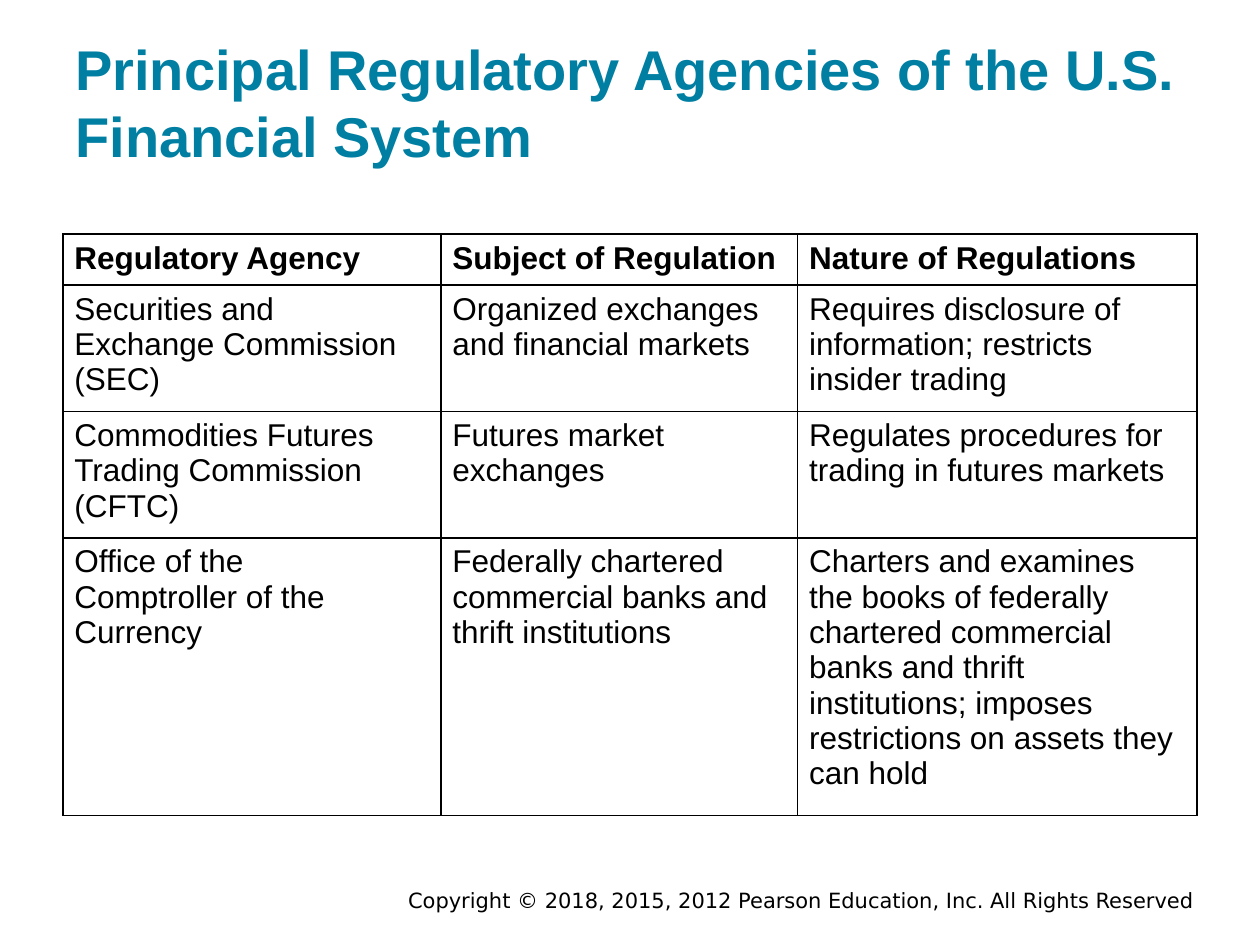
from lxml import etree
from pptx import Presentation
from pptx.dml.color import RGBColor
from pptx.enum.text import MSO_ANCHOR, PP_ALIGN
from pptx.oxml.ns import qn
from pptx.util import Cm, Pt

LEFT, RIGHT = PP_ALIGN.LEFT, PP_ALIGN.RIGHT
MIDDLE, BOTTOM = MSO_ANCHOR.MIDDLE, MSO_ANCHOR.BOTTOM

COLORS = {"title": "007FA3", "text": "000000", "border": "000000", "cell": "FFFFFF"}

COLUMN_WIDTHS = [7.62, 7.19, 8.05]
ROW_HEIGHTS = [1.03, 2.39, 2.39, 5.22]
ROWS = [
    ["Regulatory Agency", "Subject of Regulation", "Nature of Regulations"],
    [
        "Securities and\nExchange Commission (SEC)",
        "Organized exchanges\nand financial markets",
        "Requires disclosure of\ninformation; restricts insider trading",
    ],
    [
        "Commodities Futures\nTrading Commission\n(CFTC)",
        "Futures market\nexchanges",
        "Regulates procedures for trading in futures markets",
    ],
    [
        "Office of the\nComptroller of the\nCurrency",
        "Federally chartered\ncommercial banks and\nthrift institutions",
        "Charters and examines the books of federally chartered commercial banks and thrift\n"
        "institutions; imposes restrictions on assets they can hold",
    ],
]


def style_text(frame, size, color, name="Arial", bold=False, align=LEFT):
    for para in frame.paragraphs:
        para.alignment = align
        para.font.size = Pt(size)
        para.font.name = name
        para.font.bold = bold
        para.font.color.rgb = RGBColor.from_string(COLORS[color])


def add_text(page, left, top, width, height, text, anchor, inset):
    box = page.shapes.add_textbox(Cm(left), Cm(top), Cm(width), Cm(height))
    frame = box.text_frame
    frame.word_wrap = True
    frame.vertical_anchor = anchor
    frame.margin_left = frame.margin_right = Cm(0.25)
    frame.margin_top = frame.margin_bottom = Cm(inset)
    frame.text = text
    return frame


def add_title(page, left, top, width, height):
    text = "Principal Regulatory Agencies of the U.S. Financial System"
    frame = add_text(page, left, top, width, height, text, BOTTOM, 0.25)
    style_text(frame, 32, "title", bold=True)


def add_copyright(page, left, top, width, height):
    text = "Copyright © 2018, 2015, 2012 Pearson Education, Inc. All Rights Reserved"
    frame = add_text(page, left, top, width, height, text, MIDDLE, 0.13)
    style_text(frame, 12, "text", name="DejaVu Sans", align=RIGHT)


def set_borders(cell):
    properties = cell._tc.get_or_add_tcPr()
    for position, side in enumerate(("a:lnL", "a:lnR", "a:lnT", "a:lnB")):
        line = etree.Element(qn(side), w=str(Pt(1)))
        fill = etree.SubElement(line, qn("a:solidFill"))
        etree.SubElement(fill, qn("a:srgbClr"), val=COLORS["border"])
        properties.insert(position, line)


def add_agency_table(page, left, top):
    table = page.shapes.add_table(
        len(ROWS), len(COLUMN_WIDTHS), Cm(left), Cm(top),
        Cm(sum(COLUMN_WIDTHS)), Cm(sum(ROW_HEIGHTS)),
    ).table
    for column, width in zip(table.columns, COLUMN_WIDTHS):
        column.width = Cm(width)
    for row, height, texts in zip(table.rows, ROW_HEIGHTS, ROWS):
        row.height = Cm(height)
        for cell, text in zip(row.cells, texts):
            cell.margin_left = cell.margin_right = Cm(0.23)
            cell.margin_top = cell.margin_bottom = Cm(0.13)
            cell.fill.solid()
            cell.fill.fore_color.rgb = RGBColor.from_string(COLORS["cell"])
            set_borders(cell)
            cell.text_frame.text = text
            style_text(cell.text_frame, 18, "text", bold=texts is ROWS[0])


def main():
    deck = Presentation()
    deck.slide_width, deck.slide_height = Cm(25.4), Cm(19.05)
    page = deck.slides.add_slide(deck.slide_layouts[6])
    add_copyright(page, 4.45, 17.86, 19.88, 0.56)
    add_title(page, 1.27, 0.61, 22.86, 3.05)
    add_agency_table(page, 1.27, 4.72)
    deck.save("out.pptx")


if __name__ == "__main__":
    main()
